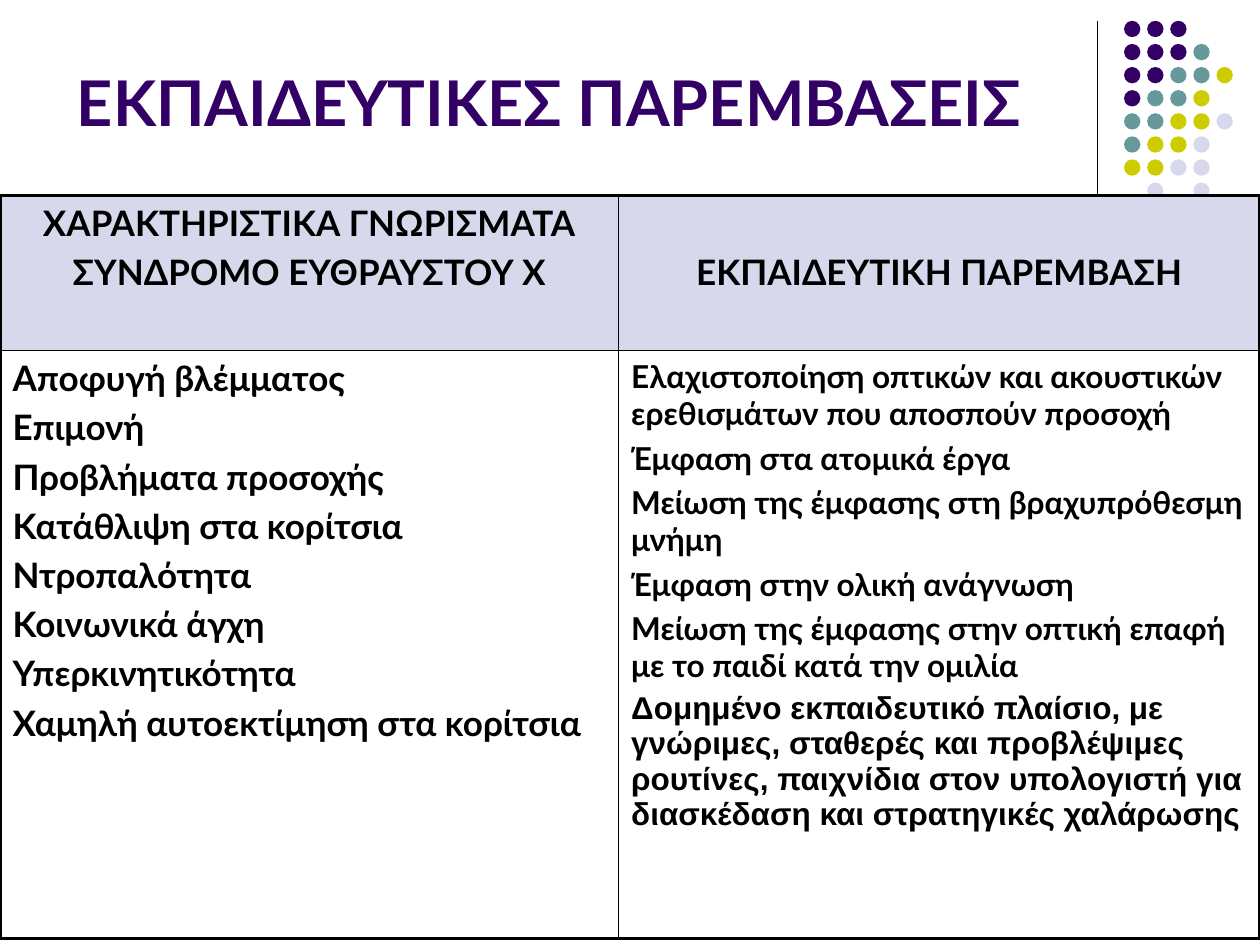
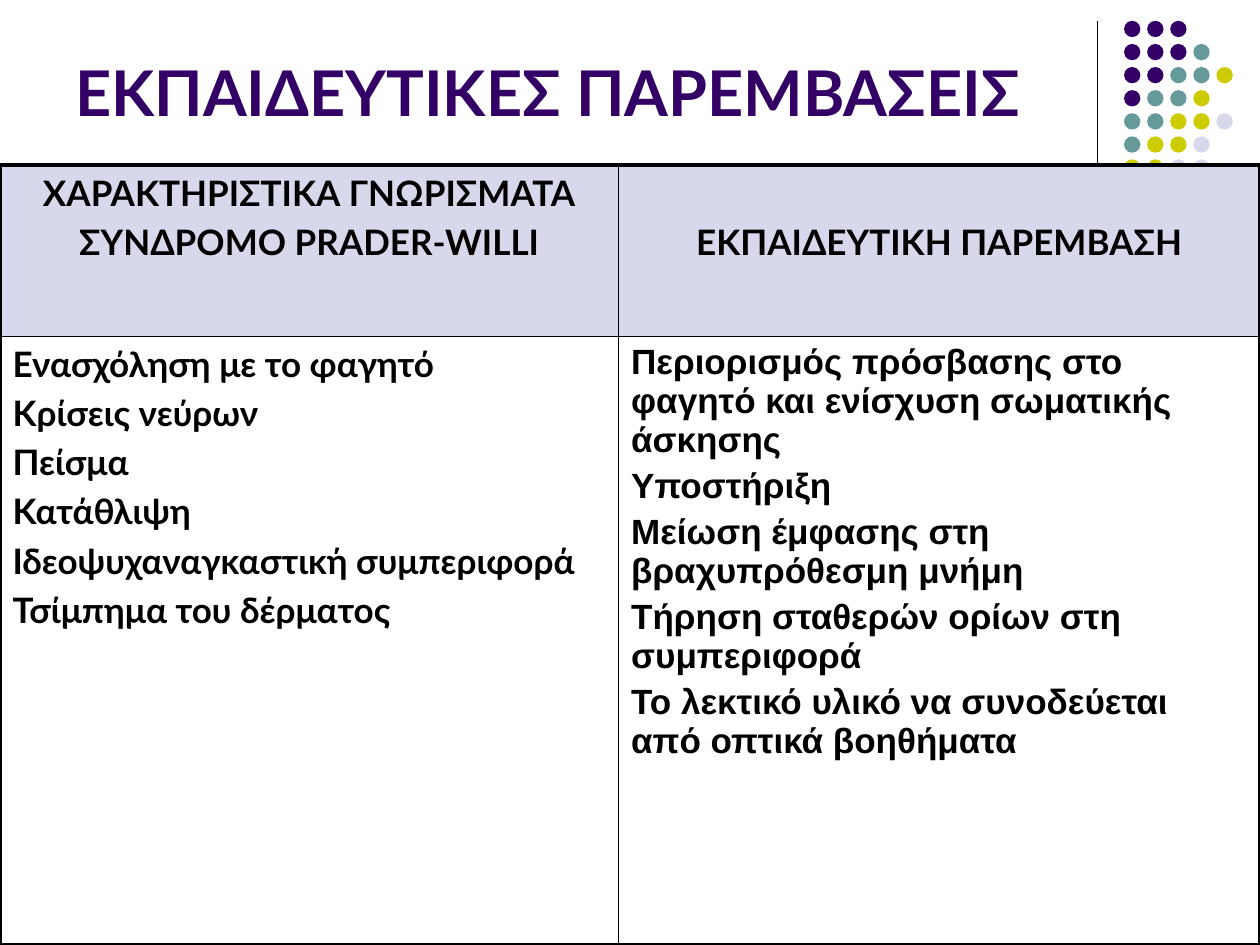
from lxml.etree import SubElement
from pptx import Presentation
from pptx.dml.color import RGBColor
from pptx.enum.shapes import MSO_CONNECTOR, MSO_SHAPE
from pptx.enum.text import MSO_ANCHOR, PP_ALIGN
from pptx.oxml.ns import qn
from pptx.util import Cm, Pt

PURPLE = RGBColor(0x33, 0x00, 0x66)
TEAL = RGBColor(0x66, 0x99, 0x99)
LIME = RGBColor(0xCC, 0xCC, 0x00)
LAVENDER = RGBColor(0xD8, 0xD8, 0xEC)
BLACK = RGBColor(0x00, 0x00, 0x00)

SLIDE_WIDTH, SLIDE_HEIGHT = 25.4, 19.05
COLUMN_WIDTHS = (12.47, 12.93)
OUTER_BORDER, INNER_BORDER = Pt(2.25), Pt(1)
PARAGRAPH_GAP = 0.2

DOT_COLOURS = {"P": PURPLE, "T": TEAL, "L": LIME, "V": LAVENDER}
DOT_ROWS = ("PPP", "PPPT", "PPTTL", "PTTL", "TTLLV", "TLLV", "LLVV", " V V")
DOT_BOX = (22.66, 0.42, 3.59)
DOT_SIZE = 0.33

TITLE = "ΕΚΠΑΙΔΕΥΤΙΚΕΣ ΠΑΡΕΜΒΑΣΕΙΣ"
TRAITS_HEADING = "ΧΑΡΑΚΤΗΡΙΣΤΙΚΑ ΓΝΩΡΙΣΜΑΤΑ"
INTERVENTION_HEADING = "ΕKΠΑΙΔΕΥΤΙΚΗ ΠΑΡΕΜΒΑΣΗ"

TITLE_FONT = {"name": "Lato", "size": Pt(36), "bold": True}
LATO_20 = {"name": "Lato", "size": Pt(20), "bold": True}
LATO_18 = {**LATO_20, "size": Pt(18)}
ARIAL_20 = {**LATO_20, "name": "Arial"}
ARIAL_18 = {**LATO_18, "name": "Arial"}

SYNDROMES = [
    {
        "title_box": (1.3, 0.53, 22, 2.39),
        "table_top": 3.94,
        "row_heights": (3.13, 11.85),
        "heading": "ΣΥΝΔΡΟΜΟ ΕΥΘΡΑΥΣΤΟΥ Χ",
        "traits": [
            "Αποφυγή βλέμματος",
            "Επιμονή",
            "Προβλήματα προσοχής",
            "Κατάθλιψη στα κορίτσια",
            "Ντροπαλότητα",
            "Κοινωνικά άγχη",
            "Υπερκινητικότητα",
            "Χαμηλή αυτοεκτίμηση στα κορίτσια",
        ],
        "interventions": [
            (LATO_18, [
                "Ελαχιστοποίηση οπτικών και ακουστικών ερεθισμάτων που αποσπούν προσοχή",
                "Έμφαση στα ατομικά έργα",
                "Μείωση της έμφασης στη βραχυπρόθεσμη μνήμη",
                "Έμφαση στην ολική ανάγνωση",
                "Μείωση της έμφασης στην οπτική επαφή με το παιδί κατά την ομιλία",
            ]),
            (ARIAL_18, [
                "Δομημένο εκπαιδευτικό πλαίσιο, με γνώριμες, σταθερές και προβλέψιμες "
                "ρουτίνες, παιχνίδια στον υπολογιστή για διασκέδαση και στρατηγικές χαλάρωσης",
            ]),
        ],
    },
    {
        "title_box": (1.27, 0.33, 20.95, 2.39),
        "table_top": 3.33,
        "row_heights": (3.45, 12.27),
        "heading": "ΣΥΝΔΡΟΜΟ PRADER-WILLI",
        "traits": [
            "Ενασχόληση με το φαγητό",
            "Κρίσεις νεύρων",
            "Πείσμα",
            "Κατάθλιψη",
            "Ιδεοψυχαναγκαστική συμπεριφορά",
            "Τσίμπημα του δέρματος",
        ],
        "interventions": [
            (ARIAL_20, [
                "Περιορισμός πρόσβασης στο φαγητό και ενίσχυση σωματικής άσκησης",
                "Υποστήριξη",
                "Μείωση έμφασης στη βραχυπρόθεσμη μνήμη",
                "Τήρηση σταθερών ορίων στη συμπεριφορά",
                "Το λεκτικό υλικό να συνοδεύεται από οπτικά βοηθήματα",
            ]),
        ],
    },
]


def apply_format(target, values):
    for attribute, value in values.items():
        setattr(target, attribute, value)


def write_paragraphs(frame, groups, alignment=PP_ALIGN.LEFT, colour=BLACK):
    lines = [(text, font) for font, texts in groups for text in texts]
    for index, (text, font) in enumerate(lines):
        paragraph = frame.add_paragraph() if index else frame.paragraphs[0]
        paragraph.alignment = alignment
        if index:
            paragraph.space_before = Pt(font["size"].pt * PARAGRAPH_GAP)
        run = paragraph.add_run()
        run.text = text
        apply_format(run.font, font)
        run.font.color.rgb = colour


def add_dot_corner(slide, box):
    left, top, height = box
    pitch = (height - DOT_SIZE) / (len(DOT_ROWS) - 1)
    divider = slide.shapes.add_connector(
        MSO_CONNECTOR.STRAIGHT, Cm(left - 0.54), Cm(top), Cm(left - 0.54), Cm(top + 4.22))
    divider.line.color.rgb = BLACK
    divider.line.width = Pt(0.75)
    SubElement(divider._element.spPr, qn("a:effectLst"))
    for row, colours in enumerate(DOT_ROWS):
        for column, key in enumerate(colours):
            if key == " ":
                continue
            dot = slide.shapes.add_shape(
                MSO_SHAPE.OVAL, Cm(left + column * pitch), Cm(top + row * pitch),
                Cm(DOT_SIZE), Cm(DOT_SIZE))
            dot.shadow.inherit = False
            dot.fill.solid()
            dot.fill.fore_color.rgb = DOT_COLOURS[key]
            dot.line.fill.background()


def add_title(slide, box):
    frame = slide.shapes.add_textbox(*map(Cm, box)).text_frame
    apply_format(frame, {"word_wrap": True, "vertical_anchor": MSO_ANCHOR.BOTTOM})
    write_paragraphs(frame, [(TITLE_FONT, [TITLE])], colour=PURPLE)


def add_borders(cell, row, column):
    outer_sides = {"lnL": column == 0, "lnR": column == 1, "lnT": row == 0, "lnB": row == 1}
    properties = cell._tc.get_or_add_tcPr()
    for side, is_outer in outer_sides.items():
        width = OUTER_BORDER if is_outer else INNER_BORDER
        border = SubElement(properties, qn(f"a:{side}"), w=str(int(width)))
        fill = SubElement(border, qn("a:solidFill"))
        SubElement(fill, qn("a:srgbClr"), val=str(BLACK))


def add_syndrome_table(slide, syndrome):
    heights = syndrome["row_heights"]
    table = slide.shapes.add_table(
        2, 2, Cm(0), Cm(syndrome["table_top"]), Cm(SLIDE_WIDTH), Cm(sum(heights))).table
    apply_format(table, {"first_row": False, "horz_banding": False})
    for column, width in zip(table.columns, COLUMN_WIDTHS):
        column.width = Cm(width)
    for row, height in zip(table.rows, heights):
        row.height = Cm(height)
    contents = (
        ([(LATO_20, [TRAITS_HEADING, syndrome["heading"]])],
         [(LATO_20, [INTERVENTION_HEADING])]),
        ([(LATO_20, syndrome["traits"])], syndrome["interventions"]),
    )
    for row, row_contents in enumerate(contents):
        for column, groups in enumerate(row_contents):
            cell = table.cell(row, column)
            add_borders(cell, row, column)
            if row == 0:
                cell.fill.solid()
                cell.fill.fore_color.rgb = LAVENDER
            else:
                cell.fill.background()
            write_paragraphs(
                cell.text_frame, groups, PP_ALIGN.LEFT if row else PP_ALIGN.CENTER)
    table.cell(0, 1).margin_top = Cm(1.12)


def add_syndrome_slide(deck, syndrome):
    slide = deck.slides.add_slide(deck.slide_layouts[6])
    add_dot_corner(slide, DOT_BOX)
    add_title(slide, syndrome["title_box"])
    add_syndrome_table(slide, syndrome)


def main():
    deck = Presentation()
    apply_format(deck, {"slide_width": Cm(SLIDE_WIDTH), "slide_height": Cm(SLIDE_HEIGHT)})
    for syndrome in SYNDROMES:
        add_syndrome_slide(deck, syndrome)
    deck.save("out.pptx")


if __name__ == "__main__":
    main()
